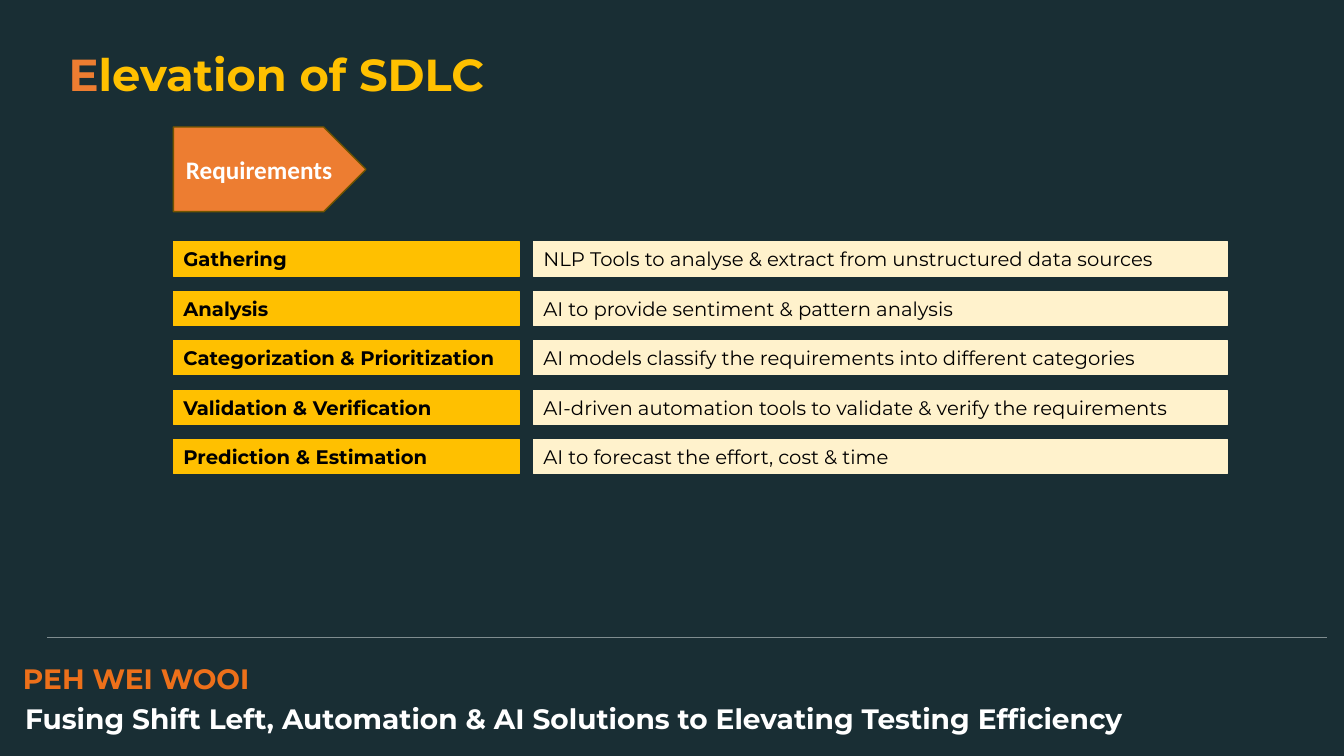
from dataclasses import dataclass

from lxml import etree
from pptx import Presentation
from pptx.dml.color import RGBColor
from pptx.enum.shapes import MSO_CONNECTOR, MSO_SHAPE
from pptx.enum.text import MSO_ANCHOR, PP_ALIGN
from pptx.oxml.ns import qn
from pptx.util import Inches, Pt

RECT, PENTAGON = MSO_SHAPE.RECTANGLE, MSO_SHAPE.PENTAGON
STRAIGHT = MSO_CONNECTOR.STRAIGHT
LEFT, CENTER = PP_ALIGN.LEFT, PP_ALIGN.CENTER
MIDDLE, TOP = MSO_ANCHOR.MIDDLE, MSO_ANCHOR.TOP


@dataclass(frozen=True)
class Theme:
    dark: str = "192E34"
    orange: str = "ED7D31"
    deep_orange: str = "ED701A"
    gold: str = "FFC000"
    cream: str = "FFF2CC"
    olive: str = "705400"
    rule: str = "7F8C8F"
    white: str = "FFFFFF"
    black: str = "000000"
    font: str = "Montserrat"
    stage_font: str = "Calibri"
    title_size: int = 32
    footer_size: int = 20
    stage_size: int = 18
    row_size: int = 14


theme = Theme()


def write(sp, text, size, color, bold=True, font=theme.font, align=LEFT, anchor=MIDDLE):
    tf = sp.text_frame
    tf.word_wrap = True
    tf.vertical_anchor = anchor
    p = tf.paragraphs[0]
    p.text = text
    p.alignment = align
    p.font.name = font
    p.font.size = Pt(size)
    p.font.bold = bold
    p.font.color.rgb = RGBColor.from_string(color)
    return p


def add_block(kind, x, y, w, h, fill, line, weight):
    sp = s.shapes.add_shape(kind, Inches(x), Inches(y), Inches(w), Inches(h))
    sp.shadow.inherit = False
    sp.fill.solid()
    sp.fill.fore_color.rgb = RGBColor.from_string(fill)
    sp.line.color.rgb = RGBColor.from_string(line)
    sp.line.width = Pt(weight)
    return sp


prs = Presentation()
prs.slide_width, prs.slide_height = Inches(13.33), Inches(7.5)
s = prs.slides.add_slide(prs.slide_layouts[5])
s.background.fill.solid()
s.background.fill.fore_color.rgb = RGBColor.from_string(theme.dark)

title = s.shapes.title
title.left, title.top = Inches(0.58), Inches(0.41)
title.width, title.height = Inches(12.47), Inches(0.64)
p = write(title, "E", theme.title_size, theme.gold)
p.runs[0].font.color.rgb = RGBColor.from_string(theme.orange)
r = p.add_run()
r.text = "levation of SDLC"

label_x, label_w = 1.72, 3.43
detail_x, detail_w = 5.29, 6.88
rows_top, row_pitch, row_h = 2.4, 0.49, 0.34

stage = add_block(PENTAGON, label_x, 1.26, 1.91, 0.84, theme.orange, theme.olive, 1)
write(stage, "Requirements", theme.stage_size, theme.white,
      font=theme.stage_font, align=CENTER)

activities = [
    ("Gathering", "NLP Tools to analyse & extract from unstructured data sources"),
    ("Analysis", "AI to provide sentiment & pattern analysis"),
    ("Categorization & Prioritization",
     "AI models classify the requirements into different categories"),
    ("Validation & Verification",
     "AI-driven automation tools to validate & verify the requirements"),
    ("Prediction & Estimation", "AI to forecast the effort, cost & time"),
]
for i, (activity, detail) in enumerate(activities):
    y = rows_top + i * row_pitch
    for text, x, w, fill, bold in (
        (activity, label_x, label_w, theme.gold, True),
        (detail, detail_x, detail_w, theme.cream, False),
    ):
        sp = add_block(RECT, x, y, w, row_h, fill, fill, 0.75)
        write(sp, text, theme.row_size, theme.black, bold)

rule = s.shapes.add_connector(STRAIGHT, Inches(0.47), Inches(6.32), Inches(13.16), Inches(6.32))
rule.line.color.rgb = RGBColor.from_string(theme.rule)
rule.line.width = Pt(0.5)
etree.SubElement(rule._element.spPr, qn("a:effectLst"))

footer = [
    ("PEH WEI WOOI", 0.13, 6.55, 4.76, 0.35, theme.deep_orange),
    ("Fusing Shift Left, Automation & AI Solutions to Elevating Testing Efficiency",
     0.15, 6.95, 11.34, 0.24, theme.white),
]
for text, x, y, w, h, color in footer:
    sp = s.shapes.add_textbox(Inches(x), Inches(y), Inches(w), Inches(h))
    p = write(sp, text, theme.footer_size, color, anchor=TOP)
    p.line_spacing = 0.9

prs.save("out.pptx")
